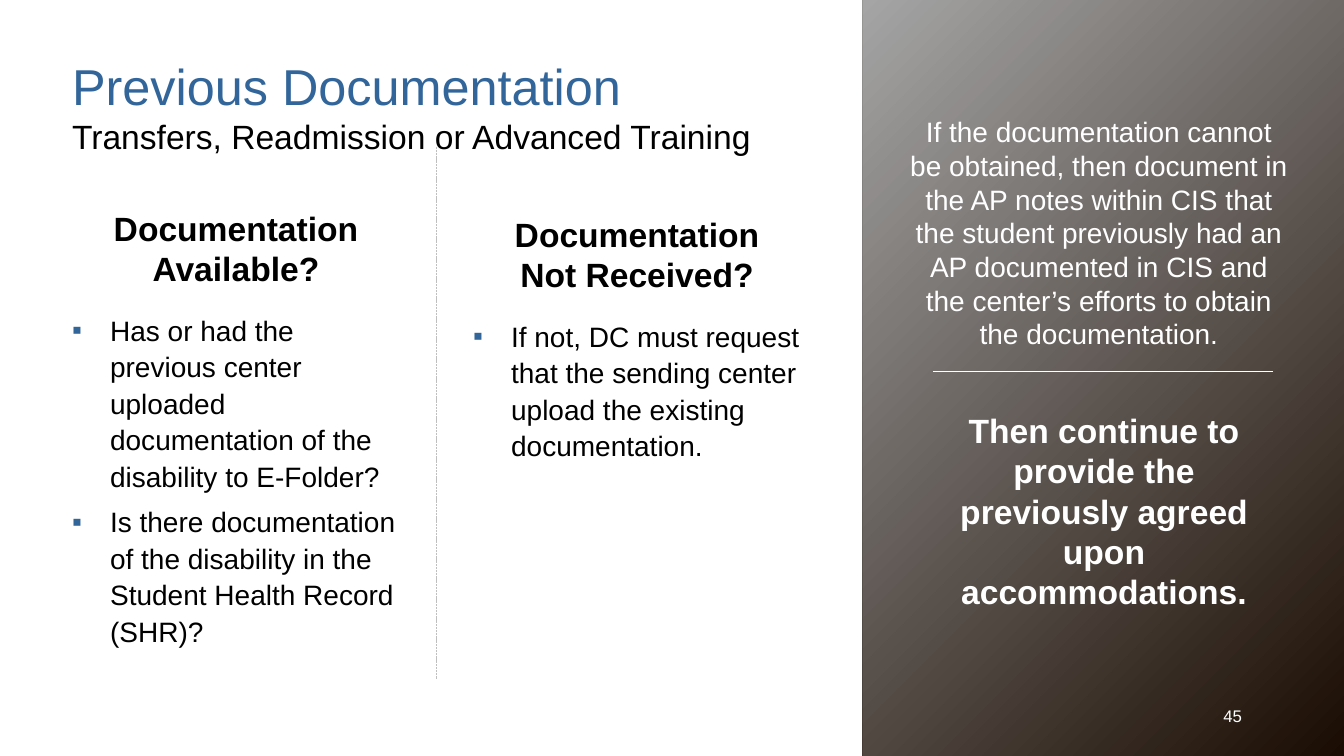
from lxml.etree import SubElement
from pptx import Presentation
from pptx.dml.color import RGBColor
from pptx.enum.dml import MSO_LINE as Dash
from pptx.enum.shapes import MSO_CONNECTOR as Conn, MSO_SHAPE as Kind
from pptx.enum.text import MSO_ANCHOR as Anchor, MSO_AUTO_SIZE as Auto, PP_ALIGN as Align
from pptx.oxml.ns import qn
from pptx.util import Pt

PX = 914400 / 100.8
FONT = "Arial"
HUES = {"blue": "32669A", "black": "000000", "white": "FFFFFF",
        "rule": "BFBFBF", "dark": "1A0C02", "light": "A5A5A5"}

TITLE = ["Previous Documentation", "Transfers, Readmission or Advanced Training"]
COLUMNS = [
    {"left": 62, "top": 203, "high": 349, "head": "Documentation Available?",
     "items": ["Has or had the previous center uploaded documentation of the disability to E-Folder?",
               "Is there documentation of the disability in the Student Health Record (SHR)?"]},
    {"left": 463, "top": 209, "high": 155, "head": "Documentation Not Received?",
     "items": ["If not, DC must request that the sending center upload the existing documentation."]},
]
NOTES = [
    ("If the documentation cannot be obtained, then document in the AP notes within CIS "
     "that the student previously had an AP documented in CIS and the center’s efforts "
     "to obtain the documentation.", (899, 110, 400, 248),
     {"size": 20, "align": Align.CENTER}),
    ("Then continue to provide the previously agreed upon accommodations.",
     (926, 405, 356, 214), {"size": 24, "bold": True, "align": Align.CENTER}),
    ("45", (950, 701, 302, 40), {"size": 12, "align": Align.RIGHT}),
]
RULES = [((436, 147), (436, 679), "rule", Dash.SQUARE_DOT),
         ((933, 371), (1273, 371), "white", None)]


def emu(*nums):
    return [round(n * PX) for n in nums]


def rgb(name):
    return RGBColor.from_string(HUES[name])


def bullet(par):
    props = par._p.get_or_add_pPr()
    props.set("marL", str(emu(38)[0]))
    props.set("indent", str(emu(-38)[0]))
    tint = SubElement(props, qn("a:buClr"))
    SubElement(tint, qn("a:srgbClr"), val=HUES["blue"])
    SubElement(props, qn("a:buFont"), typeface=FONT)
    SubElement(props, qn("a:buChar"), char="▪")


def write(shape, lines, box, sizes, hues, bold=False, align=Align.LEFT,
          list_mode=False):
    shape.left, shape.top, shape.width, shape.height = emu(*box)
    frame = shape.text_frame
    frame.word_wrap = True
    frame.auto_size = Auto.NONE
    frame.vertical_anchor = Anchor.TOP
    for i, line in enumerate(lines):
        par = frame.paragraphs[0] if i == 0 else frame.add_paragraph()
        par.alignment = align
        par.line_spacing = 1.09 if list_mode else 1.0
        par.space_before = Pt(6 if list_mode else 0)
        par.space_after = Pt(0)
        if list_mode:
            bullet(par)
        run = par.add_run()
        run.text = line
        font = run.font
        font.name, font.bold = FONT, bold
        font.size = Pt(sizes[i % len(sizes)])
        font.color.rgb = rgb(hues[i % len(hues)])


def rule(slide, start, end, hue, dash):
    line = slide.shapes.add_connector(Conn.STRAIGHT, *emu(*start, *end))
    line.line.color.rgb = rgb(hue)
    line.line.width = Pt(0.5)
    if dash:
        line.line.dash_style = dash
    SubElement(line._element.spPr, qn("a:effectLst"))


def panel(slide):
    side = slide.shapes.add_shape(Kind.RECTANGLE, *emu(863, 0, 481, 756))
    side.shadow.inherit = False
    side.line.fill.background()
    side.fill.gradient()
    side.fill.gradient_angle = 135
    for stop, hue in zip(side.fill.gradient_stops, ("dark", "light")):
        stop.color.rgb = rgb(hue)


def main():
    deck = Presentation()
    deck.slide_width, deck.slide_height = emu(1344, 756)
    slide = deck.slides.add_slide(deck.slide_layouts[4])
    title, *holders = slide.placeholders
    write(title, TITLE, (62, 50, 754, 112), (36, 24), ("blue", "black"))
    for col, head, body in zip(COLUMNS, holders[::2], holders[1::2]):
        left, top = col["left"], col["top"]
        write(head, [col["head"]], (left + 35, top, 278, 92), (24,), ("black",),
              bold=True, align=Align.CENTER)
        write(body, col["items"], (left, top + 102, 348, col["high"]), (20,),
              ("black",), list_mode=True)
    panel(slide)
    for text, box, look in NOTES:
        area = slide.shapes.add_textbox(*emu(*box))
        write(area, [text], box, (look["size"],), ("white",),
              bold=look.get("bold", False), align=look["align"])
    for item in RULES:
        rule(slide, *item)
    deck.save("out.pptx")


if __name__ == "__main__":
    main()
